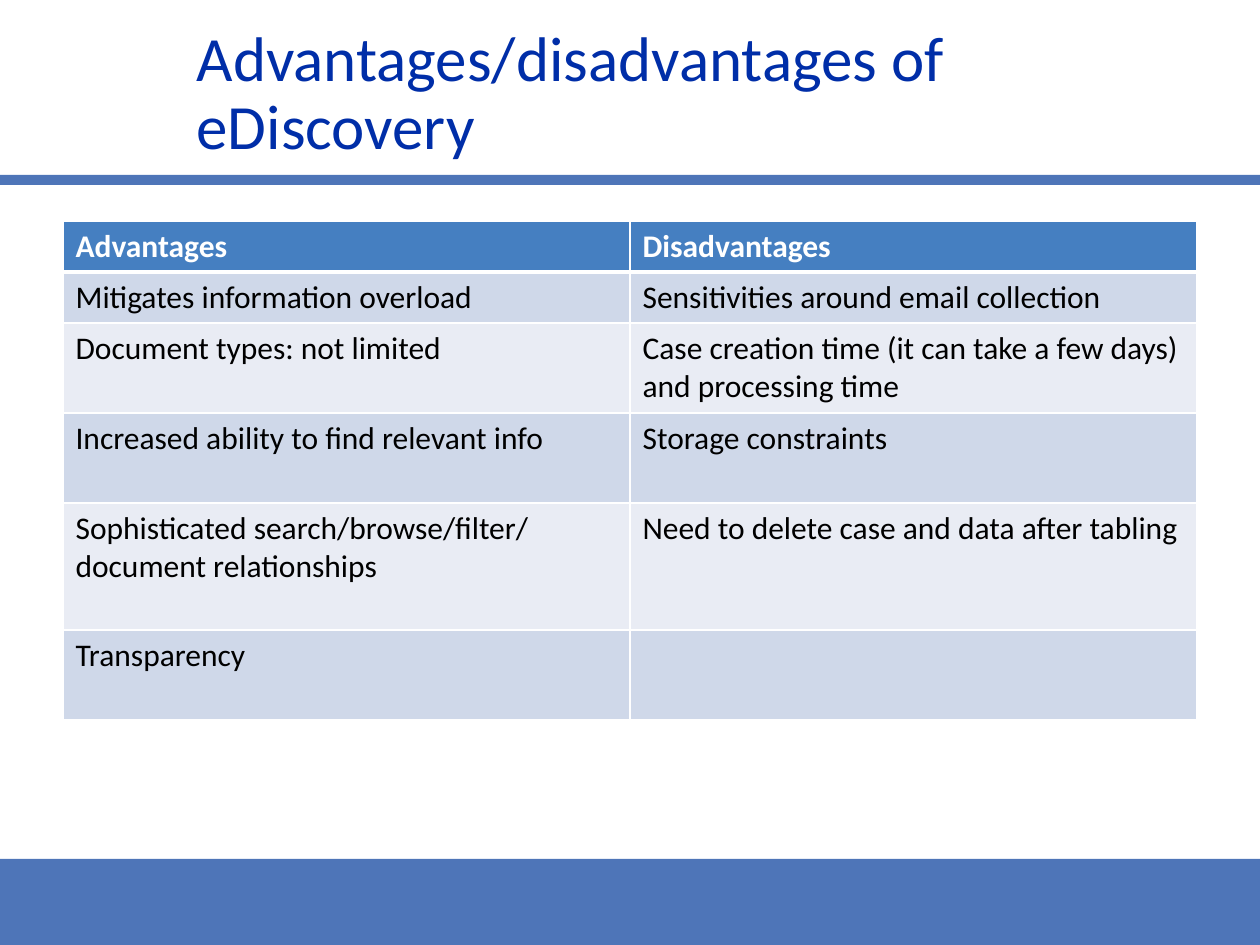
from lxml.etree import SubElement
from pptx import Presentation
from pptx.dml.color import RGBColor
from pptx.enum.shapes import MSO_SHAPE
from pptx.enum.text import MSO_ANCHOR, MSO_AUTO_SIZE, PP_ALIGN
from pptx.oxml.ns import qn
from pptx.util import Emu, Pt

PX = 914400 / 126
SLIDE_WIDTH, SLIDE_HEIGHT = 1260, 945

BAND_BLUE = RGBColor(0x4E, 0x75, 0xB8)
TITLE_BLUE = RGBColor(0x00, 0x2E, 0xA8)
HEADER_BLUE = RGBColor(0x45, 0x7F, 0xC1)
ROW_DARK = RGBColor(0xCF, 0xD8, 0xE9)
ROW_LIGHT = RGBColor(0xE9, 0xEC, 0xF4)
WHITE = RGBColor(0xFF, 0xFF, 0xFF)
BLACK = RGBColor(0x00, 0x00, 0x00)

TITLE_FONT = {"name": "Calibri", "size": Pt(36), "bold": False}
HEADER_FONT = {"name": "Calibri", "size": Pt(18), "bold": True}
BODY_FONT = {"name": "Calibri", "size": Pt(18), "bold": False}

COMPARISON = [
    ("Advantages", "Disadvantages"),
    ("Mitigates information overload", "Sensitivities around email collection"),
    ("Document types: not limited",
     "Case creation time (it can take a few days) and processing time"),
    ("Increased ability to find relevant info", "Storage constraints"),
    ("Sophisticated search/browse/filter/\vdocument relationships",
     "Need to delete case and data after tabling"),
    ("Transparency", ""),
]
ROW_HEIGHTS = [51, 51, 90, 90, 127, 90]


def px(length):
    """Turn a length in px into EMU."""
    return Emu(round(length * PX))


def apply_format(target, values):
    """Set each attribute of the target from a dict."""
    for attribute, value in values.items():
        setattr(target, attribute, value)


def style_font(paragraph, values, color):
    """Give a paragraph its font and colour."""
    apply_format(paragraph.font, values)
    paragraph.font.color.rgb = color


def add_band(slide, left, top, width, height):
    """Draw a plain blue band in the given box."""
    band = slide.shapes.add_shape(
        MSO_SHAPE.RECTANGLE, px(left), px(top), px(width), px(height))
    band.shadow.inherit = False
    band.fill.solid()
    band.fill.fore_color.rgb = BAND_BLUE
    band.line.fill.background()


def place_title(slide, left, top, width, height):
    """Fill the title placeholder and move it to the given box."""
    title = slide.shapes.title
    apply_format(title, {"left": px(left), "top": px(top),
                         "width": px(width), "height": px(height)})
    title.text_frame.text = "Advantages/disadvantages of eDiscovery"
    apply_format(title.text_frame, {
        "word_wrap": True, "auto_size": MSO_AUTO_SIZE.NONE,
        "vertical_anchor": MSO_ANCHOR.MIDDLE})
    heading = title.text_frame.paragraphs[0]
    apply_format(heading, {"alignment": PP_ALIGN.LEFT, "line_spacing": 0.9})
    style_font(heading, TITLE_FONT, TITLE_BLUE)


def add_borders(cell, widths):
    """Add white borders of the given point widths to a cell."""
    properties = cell._tc.get_or_add_tcPr()
    for side, width in widths.items():
        border = SubElement(properties, qn(f"a:ln{side}"), w=str(Pt(width)))
        fill = SubElement(border, qn("a:solidFill"))
        SubElement(fill, qn("a:srgbClr"), val=str(WHITE))


def add_comparison(slide, left, top, width):
    """Build the table of advantages and disadvantages."""
    table = slide.shapes.add_table(
        len(COMPARISON), len(COMPARISON[0]), px(left), px(top), px(width),
        px(sum(ROW_HEIGHTS))).table
    for row, (entries, height) in enumerate(zip(COMPARISON, ROW_HEIGHTS)):
        table.rows[row].height = px(height)
        for column, entry in enumerate(entries):
            cell = table.cell(row, column)
            cell.text = entry
            add_borders(cell, {"L": 1, "R": 1, "T": 3 if row == 1 else 1,
                               "B": 3 if row == 0 else 1})
            cell.fill.solid()
            if row == 0:
                background, font, color = HEADER_BLUE, HEADER_FONT, WHITE
            else:
                background = ROW_DARK if row % 2 else ROW_LIGHT
                font, color = BODY_FONT, BLACK
            cell.fill.fore_color.rgb = background
            style_font(cell.text_frame.paragraphs[0], font, color)


def main():
    """Build the slide and save it."""
    deck = Presentation()
    apply_format(deck, {"slide_width": px(SLIDE_WIDTH),
                        "slide_height": px(SLIDE_HEIGHT)})
    slide = deck.slides.add_slide(deck.slide_layouts.get_by_name("Title Only"))
    add_band(slide, 0, 859, SLIDE_WIDTH, SLIDE_HEIGHT - 859)
    add_band(slide, 0, 175, SLIDE_WIDTH, 10)
    place_title(slide, 184, 16, 912, 158)
    add_comparison(slide, 63, 221, 1134)
    deck.save("out.pptx")


if __name__ == "__main__":
    main()
